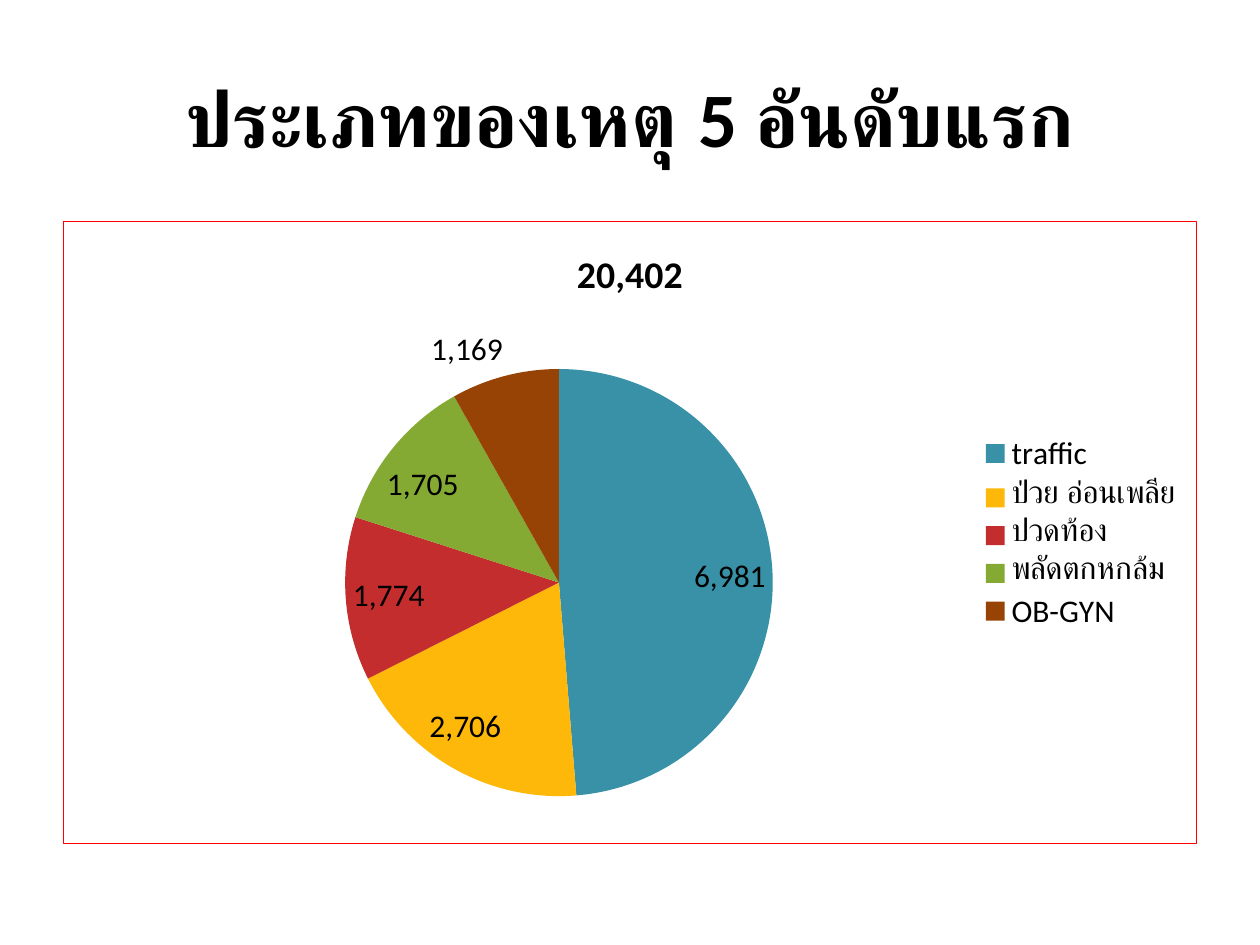
from lxml.etree import SubElement
from pptx import Presentation
from pptx.chart.data import CategoryChartData
from pptx.dml.color import RGBColor
from pptx.enum.chart import XL_CHART_TYPE, XL_LABEL_POSITION, XL_LEGEND_POSITION
from pptx.enum.text import MSO_ANCHOR, PP_ALIGN
from pptx.oxml import parse_xml
from pptx.oxml.ns import nsdecls, qn
from pptx.util import Inches, Pt

FONT = "Calibri"
BLACK = "000000"
CAUSES = [
    ("traffic", 6981, "3891A7"),
    ("ป่วย อ่อนเพลีย", 2706, "FEB80A"),
    ("ปวดท้อง", 1774, "C32D2E"),
    ("พลัดตกหกล้ม", 1705, "84AA33"),
    ("OB-GYN", 1169, "964305"),
]


def rgb(value):
    return RGBColor.from_string(value)


def style_font(font, size, bold=False):
    font.name = FONT
    font.size = Pt(size)
    font.bold = bold
    font.color.rgb = rgb(BLACK)


def add_run(p, text, size, bold=False):
    r = p.add_run()
    r.text = text
    style_font(r.font, size, bold)


def add_title(s, text):
    tb = s.shapes.add_textbox(Inches(0.5), Inches(0.3), Inches(9), Inches(1.25))
    tf = tb.text_frame
    tf.word_wrap = True
    tf.vertical_anchor = MSO_ANCHOR.MIDDLE
    p = tf.paragraphs[0]
    p.alignment = PP_ALIGN.CENTER
    add_run(p, text, 44, True)


def add_border(chart, color, width):
    sp_pr = parse_xml(f"<c:spPr {nsdecls('c', 'a')}/>")
    SubElement(sp_pr, qn("a:noFill"))
    ln = SubElement(sp_pr, qn("a:ln"), w=str(Pt(width)))
    fill = SubElement(ln, qn("a:solidFill"))
    SubElement(fill, qn("a:srgbClr"), val=color)
    chart.element.find(qn("c:chart")).addnext(sp_pr)


def add_pie(s, title, rows):
    data = CategoryChartData(number_format="#,##0")
    data.categories = [name for name, _, _ in rows]
    data.add_series("Series 1", [value for _, value, _ in rows])
    frame = s.shapes.add_chart(XL_CHART_TYPE.PIE, Inches(0.5), Inches(1.75),
                               Inches(9), Inches(4.95), data)
    chart = frame.chart
    style_font(chart.font, 18)
    chart.has_title = True
    add_run(chart.chart_title.text_frame.paragraphs[0], title, 21.6, True)
    chart.has_legend = True
    chart.legend.position = XL_LEGEND_POSITION.RIGHT
    chart.legend.include_in_layout = False

    plot = chart.plots[0]
    plot.vary_by_categories = True
    plot.has_data_labels = True
    labels = plot.data_labels
    labels.show_value = True
    labels.show_percentage = False
    labels.number_format = "#,##0"
    labels.number_format_is_linked = False
    labels.position = XL_LABEL_POSITION.BEST_FIT
    style_font(labels.font, 18)
    for i, (_, _, color) in enumerate(rows):
        fill = plot.series[0].points[i].format.fill
        fill.solid()
        fill.fore_color.rgb = rgb(color)
    add_border(chart, "FF0000", 0.75)


def main():
    prs = Presentation()
    prs.slide_width = Inches(10)
    prs.slide_height = Inches(7.5)
    s = prs.slides.add_slide(prs.slide_layouts[6])
    add_title(s, "ประเภทของเหตุ 5 อันดับแรก")
    add_pie(s, "20,402", CAUSES)
    prs.save("out.pptx")


if __name__ == "__main__":
    main()
